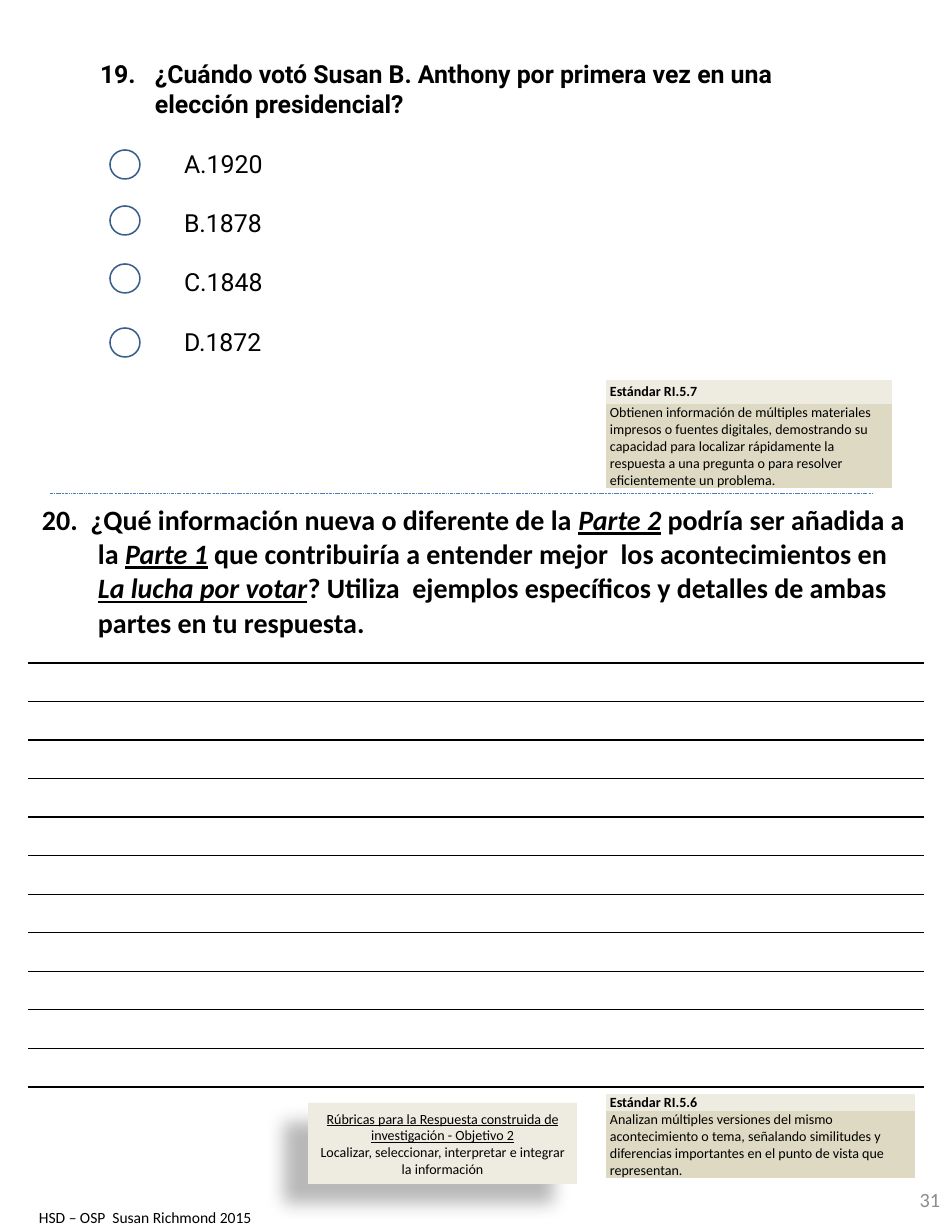
from dataclasses import dataclass
from lxml.etree import SubElement
from pptx import Presentation
from pptx.dml.color import RGBColor
from pptx.enum.dml import MSO_LINE
from pptx.enum.shapes import MSO_CONNECTOR as Conn, MSO_SHAPE as Shape
from pptx.enum.text import MSO_ANCHOR as Anchor, PP_ALIGN as Align
from pptx.oxml.ns import qn
from pptx.util import Emu, Pt

NO_GRID = "{2D5ABB26-0587-4C30-8999-92F81FD0307C}"


@dataclass(frozen=True)
class Theme:
    ink: str = "000000"
    pale: str = "EEECE1"
    sand: str = "DDD9C3"
    ring: str = "3A5F8C"
    rule: str = "4B7EBC"
    gray: str = "8C8C8C"
    body: str = "Calibri"
    quiz: str = "Roboto"
    note: int = 9
    foot: int = 10
    page: int = 13
    ask: int = 16
    essay: int = 18


T = Theme()


def px(n):
    return Emu(round(n * 914400 / 112))


def rgb(code):
    return RGBColor.from_string(code)


def style(para, size, face=T.body, color=T.ink, bold=False, align=None):
    font = para.font
    font.size, font.name, font.bold = Pt(size), face, bold
    font.color.rgb = rgb(color)
    if align is not None:
        para.alignment = align


def indent(para, left, first):
    props = para._p.get_or_add_pPr()
    props.set("marL", str(px(left)))
    props.set("indent", str(px(first)))
    return props


def inset(item, x, y):
    """Set the margins of a text frame or a table cell."""
    item.margin_left = item.margin_right = px(x)
    item.margin_top = item.margin_bottom = px(y)


def text_box(slide, x, y, w, h, pad=(12, 7)):
    frame = slide.shapes.add_textbox(*map(px, (x, y, w, h))).text_frame
    frame.word_wrap = True
    inset(frame, *pad)
    return frame


def grid(slide, x, y, w, rows):
    """Add a plain one-column table and return its cells."""
    table = slide.shapes.add_table(
        len(rows), 1, px(x), px(y), px(w), px(sum(rows))).table
    table.first_row = table.horz_banding = False
    table._tbl.tblPr.find(qn("a:tableStyleId")).text = NO_GRID
    for row, high in zip(table.rows, rows):
        row.height = px(high)
    return [row.cells[0] for row in table.rows]


def underline(cell):
    line = SubElement(cell._tc.get_or_add_tcPr(), qn("a:lnB"), w=str(Pt(1)))
    fill = SubElement(line, qn("a:solidFill"))
    SubElement(fill, qn("a:srgbClr"), val=T.ink)


def choice(slide, x, y, w, h, ask, answers, rings):
    """Draw a question with lettered answers and a ring for each."""
    frame = text_box(slide, x, y, w, h)
    para = frame.paragraphs[0]
    para.text = ask
    indent(para, 55, -55)
    style(para, T.ask, T.quiz, bold=True)
    for answer in answers:
        para = frame.add_paragraph()
        para.text = answer
        para.space_before = Pt(19)
        props = indent(para, 56, 28)
        SubElement(props, qn("a:buFont"), typeface=T.quiz)
        SubElement(props, qn("a:buAutoNum"), type="alphaUcPeriod")
        style(para, T.ask, T.quiz)
    for top in rings:
        ring = slide.shapes.add_shape(
            Shape.OVAL, px(x + 22), px(y + top), px(30), px(29))
        ring.shadow.inherit = False
        ring.fill.background()
        ring.line.color.rgb = rgb(T.ring)
        ring.line.width = Pt(1)


def divider(slide, x, y, w):
    line = slide.shapes.add_connector(
        Conn.STRAIGHT, px(x), px(y), px(x + w), px(y))
    line.line.color.rgb = rgb(T.rule)
    line.line.width = Pt(0.25)
    line.line.dash_style = MSO_LINE.DASH_DOT_DOT
    SubElement(line._element.spPr, qn("a:effectLst"))


def essay(slide, x, y, w, h, head, count, ask):
    """Draw a prompt over ruled lines; text between bars is stressed."""
    cells = grid(slide, x, y, w, [head] + [(h - head) / count] * count)
    for cell in cells:
        inset(cell, 14, 0)
        underline(cell)
    inset(cells[0], 14, 7)
    para = cells[0].text_frame.paragraphs[0]
    indent(para, 56, -56)
    style(para, T.essay, bold=True)
    for i, part in enumerate(ask.split("|")):
        run = para.add_run()
        run.text = part
        if i % 2:
            run.font.italic = run.font.underline = True


def standard(slide, x, y, w, rows, title, body):
    head, main = cells = grid(slide, x, y, w, rows)
    head.vertical_anchor = Anchor.MIDDLE
    for cell, text, fill in zip(cells, (title, body), (T.pale, T.sand)):
        inset(cell, 4, 0)
        cell.fill.solid()
        cell.fill.fore_color.rgb = rgb(fill)
        para = cell.text_frame.paragraphs[0]
        para.text = text
        style(para, T.note, bold=cell is head)


def rubric(slide, x, y, w, h, title, body):
    card = slide.shapes.add_shape(Shape.RECTANGLE, *map(px, (x, y, w, h)))
    card.fill.solid()
    card.fill.fore_color.rgb = rgb(T.pale)
    card.line.fill.background()
    card.shadow.inherit = False
    glow = SubElement(
        card._element.spPr.find(qn("a:effectLst")), qn("a:outerShdw"),
        blurRad=str(Pt(11.8)), dist=str(Pt(19.7)), dir=str(141 * 60000),
        algn="ctr", rotWithShape="0")
    tint = SubElement(glow, qn("a:srgbClr"), val=T.ink)
    SubElement(tint, qn("a:alpha"), val="28000")
    frame = card.text_frame
    frame.word_wrap = True
    frame.vertical_anchor = Anchor.TOP
    inset(frame, 12, 7)
    frame.text = f"{title}\n{body}"
    for para in frame.paragraphs:
        style(para, T.note, align=Align.CENTER)
    frame.paragraphs[0].font.underline = True


def footer(slide, x, y, w, h, label, page):
    para = text_box(slide, x, y + 36, 691, 30, (11, 6)).paragraphs[0]
    para.text = label
    style(para, T.foot)
    frame = text_box(slide, x + w - 74, y, 74, h)
    frame.vertical_anchor = Anchor.MIDDLE
    para = frame.paragraphs[0]
    para.text = page
    style(para, T.page, color=T.gray, align=Align.RIGHT)


def main():
    deck = Presentation()
    deck.slide_width, deck.slide_height = px(952), px(1232)
    slide = deck.slides.add_slide(deck.slide_layouts[6])
    choice(slide, 88, 52, 788, 374,
           "19.\t¿Cuándo votó Susan B. Anthony por primera vez en una "
           "elección presidencial?",
           ("1920", "1878", "1848", "1872"), (98, 154, 212, 276))
    divider(slide, 50, 493, 822)
    essay(slide, 28, 497, 896, 590, 166, 11,
          "20.  ¿Qué información nueva o diferente de la |Parte 2| podría ser "
          "añadida a la |Parte 1| que contribuiría a entender mejor  los "
          "acontecimientos en |La lucha por votar|? Utiliza  ejemplos "
          "específicos y detalles de ambas partes en tu respuesta.")
    standard(slide, 606, 380, 286, (24, 84), "Estándar RI.5.7",
             "Obtienen información de múltiples materiales impresos o fuentes "
             "digitales, demostrando su capacidad para localizar rápidamente "
             "la respuesta a una pregunta o para resolver eficientemente un "
             "problema.")
    standard(slide, 606, 1094, 309, (17, 67), "Estándar RI.5.6",
             "Analizan múltiples versiones del mismo acontecimiento o tema, "
             "señalando similitudes y diferencias importantes en el punto de "
             "vista que representan.")
    rubric(slide, 308, 1103, 269, 81,
           "Rúbricas para la Respuesta construida de investigación - "
           "Objetivo 2",
           "Localizar, seleccionar, interpretar e integrar la información")
    footer(slide, 28, 1166, 924, 66, "HSD – OSP  Susan Richmond 2015", "31")
    deck.save("out.pptx")


if __name__ == "__main__":
    main()
